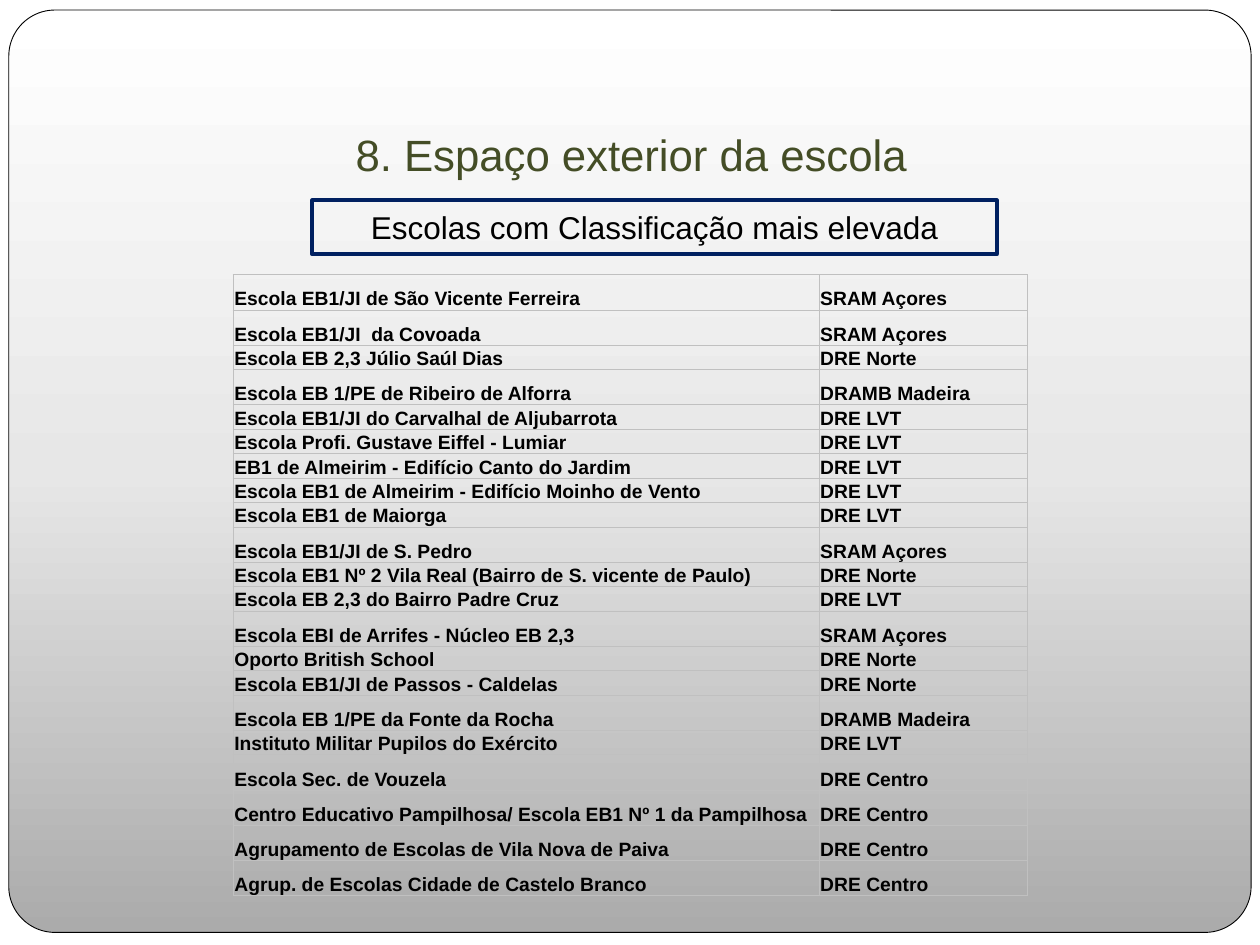
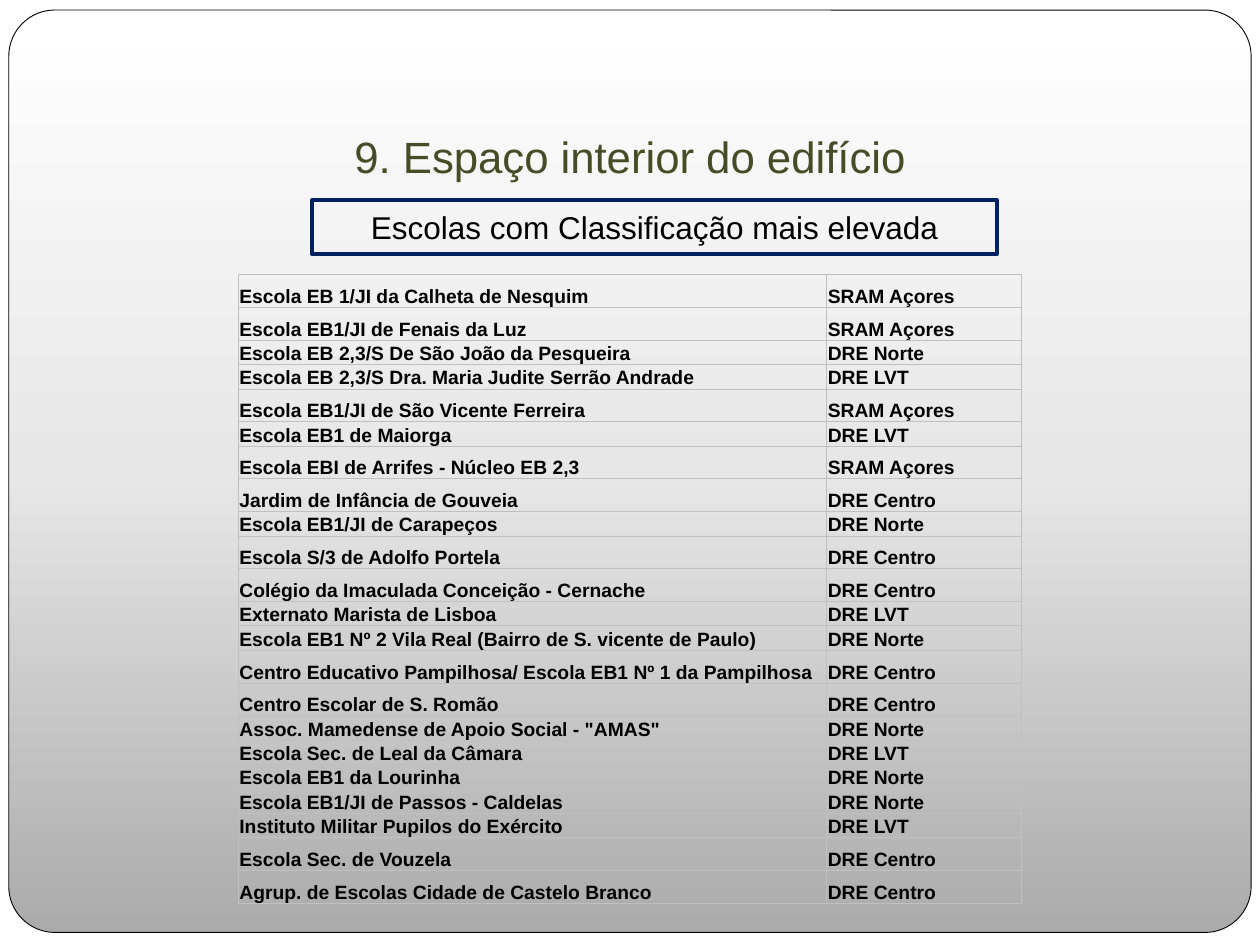
import copy
from dataclasses import dataclass

import pptx
import pptx.dml.color
import pptx.enum.shapes
import pptx.enum.text
import pptx.oxml
import pptx.oxml.ns
import pptx.util

Inches = pptx.util.Inches
Pt = pptx.util.Pt
RGBColor = pptx.dml.color.RGBColor
Align = pptx.enum.text.PP_ALIGN
Anchor = pptx.enum.text.MSO_ANCHOR
Shape = pptx.enum.shapes.MSO_SHAPE
qn = pptx.oxml.ns.qn

# Shared look
FONT = "Arial"
BLACK = RGBColor(0x00, 0x00, 0x00)
WHITE = RGBColor(0xFF, 0xFF, 0xFF)
OLIVE = RGBColor(0x44, 0x4D, 0x26)
NAVY = RGBColor(0x00, 0x20, 0x60)
SILVER = RGBColor(0xC0, 0xC0, 0xC0)
SHADES = ((0, RGBColor(0xAB, 0xAB, 0xAB)), (0.5, RGBColor(0xE7, 0xE7, 0xE7)), (1, WHITE))
HEADING = "Escolas com Classificação mais elevada"

# Regions
ACORES = "SRAM Açores"
MADEIRA = "DRAMB Madeira"
NORTE = "DRE Norte"
LISBOA = "DRE LVT"
CENTRO = "DRE Centro"
LOW = (NORTE, LISBOA)  # regions whose rows are low; all others are tall


@dataclass
class Page:
    title: str
    title_at: tuple[float, float]
    left: float
    cols: tuple[float, float]
    tall: float
    low: float
    rows: list[tuple[str, str]]


PAGES = [
    Page("8. Espaço exterior da escola", (0.51, 0.28), 1.85, (4.65, 1.65), 0.28, 0.15, [
        ("Escola EB1/JI de São Vicente Ferreira", ACORES),
        ("Escola EB1/JI  da Covoada", ACORES),
        ("Escola EB 2,3 Júlio Saúl Dias", NORTE),
        ("Escola EB 1/PE de Ribeiro de Alforra", MADEIRA),
        ("Escola EB1/JI do Carvalhal de Aljubarrota", LISBOA),
        ("Escola Profi. Gustave Eiffel - Lumiar", LISBOA),
        ("EB1 de Almeirim - Edifício Canto do Jardim", LISBOA),
        ("Escola EB1 de Almeirim - Edifício Moinho de Vento", LISBOA),
        ("Escola EB1 de Maiorga", LISBOA),
        ("Escola EB1/JI de S. Pedro", ACORES),
        ("Escola EB1 Nº 2 Vila Real (Bairro de S. vicente de Paulo)", NORTE),
        ("Escola EB 2,3 do Bairro Padre Cruz", LISBOA),
        ("Escola EBI de Arrifes - Núcleo EB 2,3", ACORES),
        ("Oporto British School", NORTE),
        ("Escola EB1/JI de Passos - Caldelas", NORTE),
        ("Escola EB 1/PE da Fonte da Rocha", MADEIRA),
        ("Instituto Militar Pupilos do Exército", LISBOA),
        ("Escola Sec. de Vouzela", CENTRO),
        ("Centro Educativo Pampilhosa/ Escola EB1 Nº 1 da Pampilhosa", CENTRO),
        ("Agrupamento de Escolas de Vila Nova de Paiva", CENTRO),
        ("Agrup. de Escolas Cidade de Castelo Branco", CENTRO),
    ]),
    Page("9. Espaço interior do edifício", (0.5, 0.3), 1.89, (4.67, 1.55), 0.26, 0.14, [
        ("Escola EB 1/JI da Calheta de Nesquim", ACORES),
        ("Escola EB1/JI de Fenais da Luz", ACORES),
        ("Escola EB 2,3/S De São João da Pesqueira", NORTE),
        ("Escola EB 2,3/S Dra. Maria Judite Serrão Andrade", LISBOA),
        ("Escola EB1/JI de São Vicente Ferreira", ACORES),
        ("Escola EB1 de Maiorga", LISBOA),
        ("Escola EBI de Arrifes - Núcleo EB 2,3", ACORES),
        ("Jardim de Infância de Gouveia", CENTRO),
        ("Escola EB1/JI de Carapeços", NORTE),
        ("Escola S/3 de Adolfo Portela", CENTRO),
        ("Colégio da Imaculada Conceição - Cernache", CENTRO),
        ("Externato Marista de Lisboa", LISBOA),
        ("Escola EB1 Nº 2 Vila Real (Bairro de S. vicente de Paulo)", NORTE),
        ("Centro Educativo Pampilhosa/ Escola EB1 Nº 1 da Pampilhosa", CENTRO),
        ("Centro Escolar de S. Romão", CENTRO),
        ("Assoc. Mamedense de Apoio Social - \"AMAS\"", NORTE),
        ("Escola Sec. de Leal da Câmara", LISBOA),
        ("Escola EB1 da Lourinha", NORTE),
        ("Escola EB1/JI de Passos - Caldelas", NORTE),
        ("Instituto Militar Pupilos do Exército", LISBOA),
        ("Escola Sec. de Vouzela", CENTRO),
        ("Agrup. de Escolas Cidade de Castelo Branco", CENTRO),
    ]),
]


def write(frame, text: str, *, size: float, color: RGBColor = BLACK,
          bold: bool = False, align=Align.LEFT) -> None:
    """Put one formatted paragraph into a text frame."""
    frame.word_wrap = True
    para = frame.paragraphs[0]
    para.alignment = align
    run = para.add_run()
    run.text = text
    run.font.name = FONT
    run.font.size = Pt(size)
    run.font.bold = bold
    run.font.color.rgb = color


def add_panel(slide) -> None:
    """Draw the rounded panel with its grey fade."""
    panel = slide.shapes.add_shape(Shape.ROUNDED_RECTANGLE, Inches(0.07), Inches(0.08),
                                   Inches(9.86), Inches(7.32))
    panel.adjustments[0] = 0.05
    panel.shadow.inherit = False
    panel.line.color.rgb = BLACK
    panel.line.width = Pt(0.5)
    panel.fill.gradient()
    panel.fill.gradient_angle = 90
    stops = panel._element.spPr.find(".//" + qn("a:gsLst"))
    stops.append(copy.deepcopy(stops[0]))
    for stop, (place, shade) in zip(panel.fill.gradient_stops, SHADES):
        stop.position = place
        stop.color.rgb = shade


def add_title(slide, page: Page) -> None:
    left, top = page.title_at
    box = slide.shapes.add_textbox(Inches(left), Inches(top), Inches(9), Inches(1.25))
    frame = box.text_frame
    frame.vertical_anchor = Anchor.BOTTOM
    frame.margin_bottom = Inches(0.1)
    write(frame, page.title, size=25, color=OLIVE, align=Align.CENTER)


def add_heading(slide) -> None:
    box = slide.shapes.add_shape(Shape.RECTANGLE, Inches(2.48), Inches(1.59),
                                 Inches(5.43), Inches(0.43))
    box.shadow.inherit = False
    box.fill.background()
    box.line.color.rgb = NAVY
    box.line.width = Pt(2.25)
    write(box.text_frame, HEADING, size=18, align=Align.CENTER)


def add_rules(cell) -> None:
    """Give a cell thin borders on its four sides."""
    props = cell._tc.get_or_add_tcPr()
    for place, side in enumerate("LRTB"):
        props.insert(place, pptx.oxml.parse_xml(
            f'<a:ln{side} {pptx.oxml.ns.nsdecls("a")} w="{Pt(0.5)}">'
            f'<a:solidFill><a:srgbClr val="{SILVER}"/></a:solidFill></a:ln{side}>'))


def add_list(slide, page: Page) -> None:
    """Draw the table of schools and regions."""
    highs = [page.low if region in LOW else page.tall for _, region in page.rows]
    table = slide.shapes.add_table(len(page.rows), 2, Inches(page.left), Inches(2.18),
                                   Inches(sum(page.cols)), Inches(sum(highs))).table
    table.first_row = table.horz_banding = False
    for col, width in zip(table.columns, page.cols):
        col.width = Inches(width)
    for row, high, texts in zip(table.rows, highs, page.rows):
        row.height = Inches(high)
        for cell, text in zip(row.cells, texts):
            cell.fill.background()
            cell.vertical_anchor = Anchor.BOTTOM
            cell.margin_left = cell.margin_right = cell.margin_top = Inches(0.01)
            cell.margin_bottom = 0
            add_rules(cell)
            write(cell.text_frame, text, size=11, bold=True)


def main() -> None:
    deck = pptx.Presentation()
    deck.slide_width, deck.slide_height = Inches(10), Inches(7.5)
    for page in PAGES:
        slide = deck.slides.add_slide(deck.slide_layouts[6])
        slide.background.fill.solid()
        slide.background.fill.fore_color.rgb = WHITE
        add_panel(slide)
        add_title(slide, page)
        add_heading(slide)
        add_list(slide, page)
    deck.save("out.pptx")


if __name__ == "__main__":
    main()
